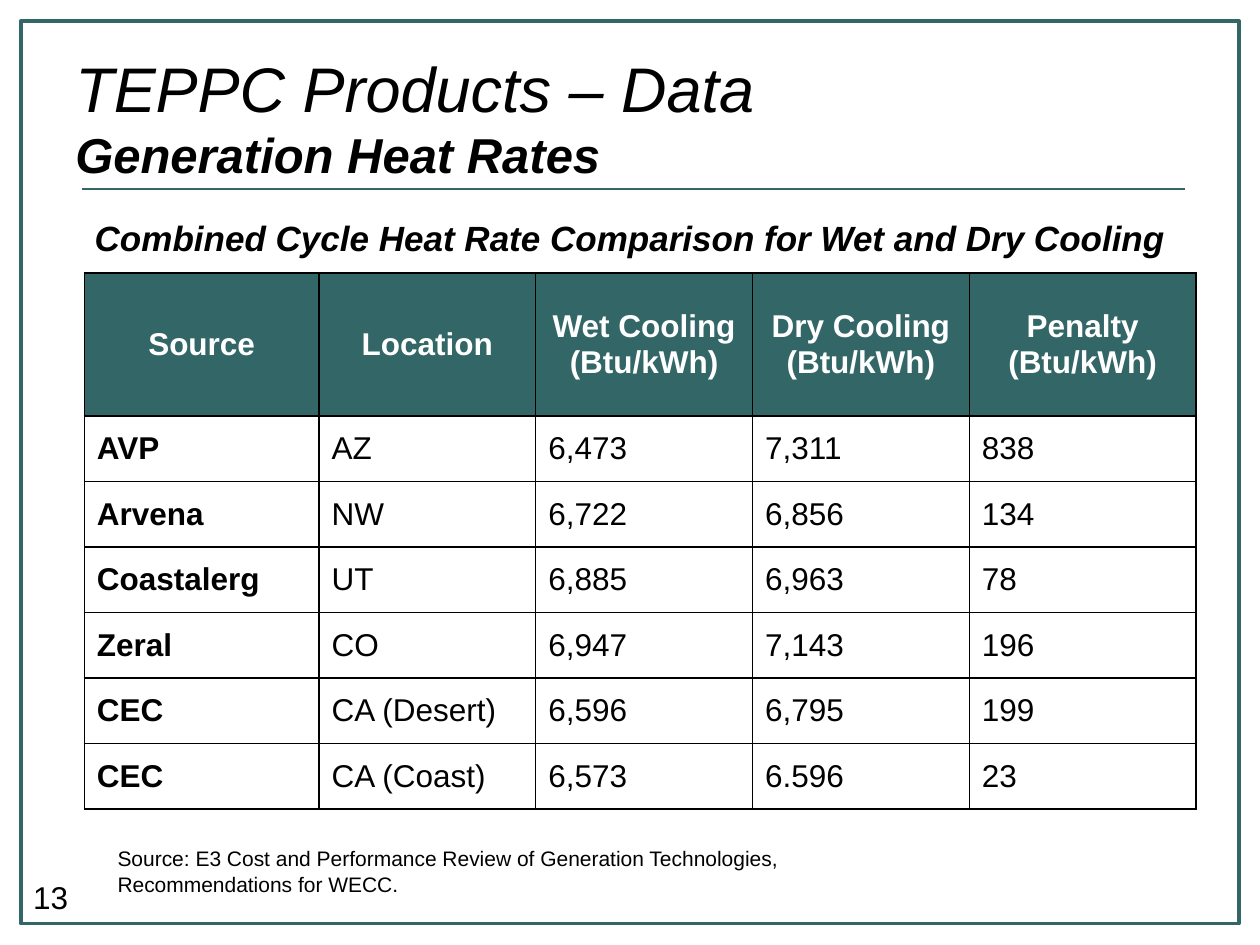
from lxml import etree
from pptx import Presentation
from pptx.dml.color import RGBColor
from pptx.enum.shapes import MSO_CONNECTOR, MSO_SHAPE
from pptx.enum.text import MSO_ANCHOR, PP_ALIGN
from pptx.oxml import parse_xml
from pptx.oxml.ns import nsdecls, qn
from pptx.util import Cm, Pt

RECT = MSO_SHAPE.RECTANGLE
STRAIGHT = MSO_CONNECTOR.STRAIGHT
TOP, MIDDLE = MSO_ANCHOR.TOP, MSO_ANCHOR.MIDDLE
LEFT, CENTER = PP_ALIGN.LEFT, PP_ALIGN.CENTER

HEADER = ["Source", "Location", "Wet Cooling\n(Btu/kWh)",
          "Dry Cooling\n(Btu/kWh)", "Penalty\n(Btu/kWh)"]
HEAT_RATES = [
    ["AVP", "AZ", "6,473", "7,311", "838"],
    ["Arvena", "NW", "6,722", "6,856", "134"],
    ["Coastalerg", "UT", "6,885", "6,963", "78"],
    ["Zeral", "CO", "6,947", "7,143", "196"],
    ["CEC", "CA (Desert)", "6,596", "6,795", "199"],
    ["CEC", "CA (Coast)", "6,573", "6.596", "23"],
]
COLUMN_WIDTHS = [4.73, 4.37, 4.37, 4.37, 4.57]
HEADER_HEIGHT, ROW_HEIGHT = 2.89, 1.32


def color(hex_code):
    return RGBColor.from_string(hex_code)


class SlideBuilder:
    font = "Arial"
    ink = "000000"
    paper = "FFFFFF"
    accent = "336666"

    def __init__(self, slide):
        self.slide = slide

    def add_run(self, paragraph, text, size, bold=False, italic=False, ink=None):
        run = paragraph.add_run()
        run.text = text
        run.font.name = self.font
        run.font.size = Pt(size)
        run.font.bold = bold
        run.font.italic = italic
        run.font.color.rgb = color(ink or self.ink)

    def text(self, left, top, width, height, anchor=TOP, align=LEFT):
        """Add an empty text box and return its first paragraph."""
        box = self.slide.shapes.add_textbox(Cm(left), Cm(top), Cm(width), Cm(height))
        box.text_frame.word_wrap = True
        box.text_frame.vertical_anchor = anchor
        paragraph = box.text_frame.paragraphs[0]
        paragraph.alignment = align
        return paragraph

    def rectangle(self, left, top, width, height, fill=None, line=None):
        shape = self.slide.shapes.add_shape(
            RECT, Cm(left), Cm(top), Cm(width), Cm(height))
        shape.shadow.inherit = False
        if fill:
            shape.fill.solid()
            shape.fill.fore_color.rgb = color(fill)
        else:
            shape.fill.background()
        if line:
            shape.line.color.rgb = color(line)
            shape.line.width = Pt(2)
        else:
            shape.line.fill.background()
        return shape

    def rule(self, left, right, y):
        line = self.slide.shapes.add_connector(
            STRAIGHT, Cm(left), Cm(y), Cm(right), Cm(y))
        line.line.color.rgb = color(self.accent)
        line.line.width = Pt(1.5)
        etree.SubElement(line._element.spPr, qn("a:effectLst"))

    def border(self, cell):
        for side in ("lnL", "lnR", "lnT", "lnB"):
            cell._tc.get_or_add_tcPr().append(parse_xml(
                f'<a:{side} {nsdecls("a")} w="{Pt(1)}"><a:solidFill>'
                f'<a:srgbClr val="{self.ink}"/></a:solidFill></a:{side}>'))

    def cell(self, cell, text, is_header, bold):
        self.border(cell)
        if is_header:
            cell.fill.solid()
            cell.fill.fore_color.rgb = color(self.accent)
        else:
            cell.fill.background()
        cell.vertical_anchor = MIDDLE
        for index, line in enumerate(text.split("\n")):
            frame = cell.text_frame
            paragraph = frame.add_paragraph() if index else frame.paragraphs[0]
            paragraph.alignment = CENTER if is_header else LEFT
            self.add_run(paragraph, line, 18, bold=bold,
                         ink=self.paper if is_header else self.ink)

    def table(self, left, top, rows, widths, heights):
        table = self.slide.shapes.add_table(
            len(rows), len(widths), Cm(left), Cm(top),
            Cm(sum(widths)), Cm(sum(heights))).table
        for column, width in zip(table.columns, widths):
            column.width = Cm(width)
        for r, (values, height) in enumerate(zip(rows, heights)):
            table.rows[r].height = Cm(height)
            for c, value in enumerate(values):
                self.cell(table.cell(r, c), value, r == 0, r == 0 or c == 0)


def main():
    presentation = Presentation()
    presentation.slide_width = Cm(25.4)
    presentation.slide_height = Cm(19.05)
    builder = SlideBuilder(
        presentation.slides.add_slide(presentation.slide_layouts[6]))

    page_number = builder.text(0.42, 17.57, 1.48, 1.07)
    builder.add_run(page_number, "13", 18)
    builder.rectangle(0.42, 0.42, 24.56, 18.2, line=builder.accent)
    builder.rule(1.65, 23.88, 3.81)

    title = builder.text(1.27, 0.76, 22.86, 3.18, anchor=MIDDLE)
    builder.add_run(title, "TEPPC Products – Data ", 36, italic=True)
    title.add_line_break()
    builder.add_run(title, "Generation Heat Rates", 28, bold=True, italic=True)

    builder.table(1.7, 5.5, [HEADER] + HEAT_RATES, COLUMN_WIDTHS,
                  [HEADER_HEIGHT] + [ROW_HEIGHT] * len(HEAT_RATES))

    caption = builder.text(0.64, 4.23, 24.13, 1.11, align=CENTER)
    caption.space_after = Pt(6)
    builder.add_run(caption, "Combined Cycle Heat Rate Comparison for Wet and Dry Cooling",
                    20, bold=True, italic=True)

    citation_frame = builder.rectangle(
        2.12, 16.93, 15.66, 1.28, fill=builder.paper).text_frame
    citation_frame.word_wrap = True
    citation_frame.vertical_anchor = TOP
    citation = citation_frame.paragraphs[0]
    citation.alignment = LEFT
    builder.add_run(citation, "Source: E3 Cost and Performance Review of Generation "
                    "Technologies, Recommendations for WECC.", 12)

    presentation.save("out.pptx")


if __name__ == "__main__":
    main()
